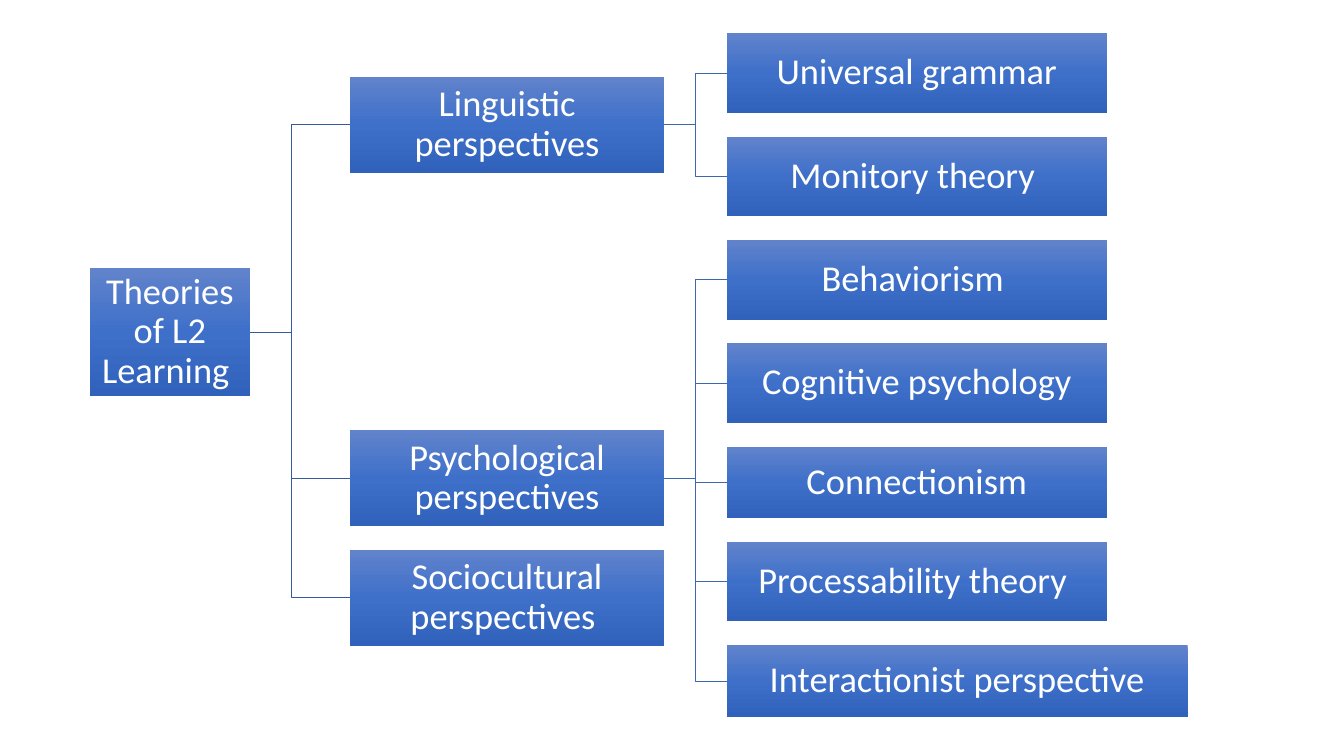
from copy import deepcopy
from dataclasses import dataclass

from pptx import Presentation
from pptx.dml.color import RGBColor
from pptx.enum.shapes import MSO_SHAPE
from pptx.enum.text import MSO_ANCHOR, PP_ALIGN
from pptx.oxml.ns import qn
from pptx.util import Inches, Pt

COLORS = {
    "top": "6183CB",
    "middle": "3E70CA",
    "bottom": "3062BB",
    "root_line": "365B9D",
    "theory_line": "3E67B2",
    "text": "FFFFFF",
}
ROOT = "Theories of L2 Learning "
# Each perspective lists its theories as (name, width, height).
PERSPECTIVES = [
    ("Linguistic perspectives", [
        ("Universal grammar", 3.77, 0.79),
        ("Monitory theory ", 3.77, 0.79),
    ]),
    ("Psychological perspectives", [
        ("Behaviorism ", 3.77, 0.79),
        ("Cognitive psychology", 3.77, 0.79),
        ("Connectionism", 3.77, 0.71),
        ("Processability theory ", 3.77, 0.79),
        ("Interactionist perspective", 4.57, 0.71),
    ]),
    ("Sociocultural perspectives ", []),
]
PERSPECTIVE_LEFT, PERSPECTIVE_WIDTH, PERSPECTIVE_HEIGHT = 3.47, 3.12, 0.95
THEORY_LEFT = 7.21
ROOT_LINE_START = 2.31


@dataclass
class Box:
    label: str
    left: float
    top: float
    width: float
    height: float

    @property
    def right(self):
        return self.left + self.width

    @property
    def bottom(self):
        return self.top + self.height

    @property
    def middle(self):
        return self.top + self.height / 2


def rgb(name):
    return RGBColor.from_string(COLORS[name])


def fill_with_gradient(shape):
    """Shade the shape from top to bottom in three stops."""
    shape.fill.gradient()
    shape.fill.gradient_angle = 270
    stop_list = shape.fill._xPr.find(qn("a:gradFill")).find(qn("a:gsLst"))
    stop_list.insert(1, deepcopy(stop_list[0]))
    names = ("top", "middle", "bottom")
    for index, (stop, name) in enumerate(zip(shape.fill.gradient_stops, names)):
        stop.position = index / 2
        stop.color.rgb = rgb(name)


def draw_box(slide, box):
    shape = slide.shapes.add_shape(
        MSO_SHAPE.RECTANGLE, Inches(box.left), Inches(box.top),
        Inches(box.width), Inches(box.height))
    shape.shadow.inherit = False
    fill_with_gradient(shape)
    shape.line.fill.background()
    frame = shape.text_frame
    frame.word_wrap = True
    frame.vertical_anchor = MSO_ANCHOR.MIDDLE
    frame.margin_left = frame.margin_right = Inches(0.02)
    frame.margin_top = frame.margin_bottom = Inches(0.02)
    frame.text = box.label
    paragraph = frame.paragraphs[0]
    paragraph.alignment = PP_ALIGN.CENTER
    paragraph.line_spacing = 0.9
    font = paragraph.runs[0].font
    font.name = "Calibri"
    font.size = Pt(26)
    font.color.rgb = rgb("text")


def draw_branch(slide, start, parent, child, color):
    """Draw a right-angled line that bends halfway to the child."""
    bend = (start + child.left) / 2
    builder = slide.shapes.build_freeform(
        Inches(start), Inches(parent.middle), scale=1.0)
    builder.add_line_segments(
        [(Inches(x), Inches(y)) for x, y in (
            (bend, parent.middle), (bend, child.middle),
            (child.left, child.middle))],
        close=False)
    branch = builder.convert_to_shape()
    branch.shadow.inherit = False
    branch.fill.background()
    branch.line.color.rgb = rgb(color)
    branch.line.width = Pt(0.5)


def stack_theories(top, bottom):
    """Spread all theories evenly; return them by perspective, and the gap."""
    heights = [height for _, group in PERSPECTIVES for *_, height in group]
    gap = (bottom - top - sum(heights)) / (len(heights) - 1)
    groups = []
    for _, theories in PERSPECTIVES:
        groups.append([])
        for name, width, height in theories:
            groups[-1].append(Box(name, THEORY_LEFT, top, width, height))
            top += height + gap
    return groups, gap


def place_perspectives(groups, gap):
    """Centre each perspective on its theories, or put it below the last one."""
    perspectives = []
    for (name, _), theories in zip(PERSPECTIVES, groups):
        if theories:
            middle = (theories[0].top + theories[-1].bottom) / 2
            top = middle - PERSPECTIVE_HEIGHT / 2
        else:
            top = perspectives[-1].bottom + gap
        perspectives.append(Box(name, PERSPECTIVE_LEFT, top,
                                PERSPECTIVE_WIDTH, PERSPECTIVE_HEIGHT))
    return perspectives


def draw_theory_tree(slide, top, bottom):
    groups, gap = stack_theories(top, bottom)
    perspectives = place_perspectives(groups, gap)
    root = Box(ROOT, 0.89, 2.66, 1.59, 1.27)

    for perspective, theories in zip(perspectives, groups):
        draw_branch(slide, ROOT_LINE_START, root, perspective, "root_line")
        for theory in theories:
            draw_branch(slide, perspective.right, perspective, theory,
                        "theory_line")

    draw_box(slide, root)
    for perspective, theories in zip(perspectives, groups):
        for box in (perspective, *theories):
            draw_box(slide, box)


def main():
    presentation = Presentation()
    presentation.slide_width = Inches(13.33)
    presentation.slide_height = Inches(7.5)
    slide = presentation.slides.add_slide(presentation.slide_layouts[6])
    draw_theory_tree(slide, top=0.33, bottom=7.11)
    presentation.save("out.pptx")


if __name__ == "__main__":
    main()
